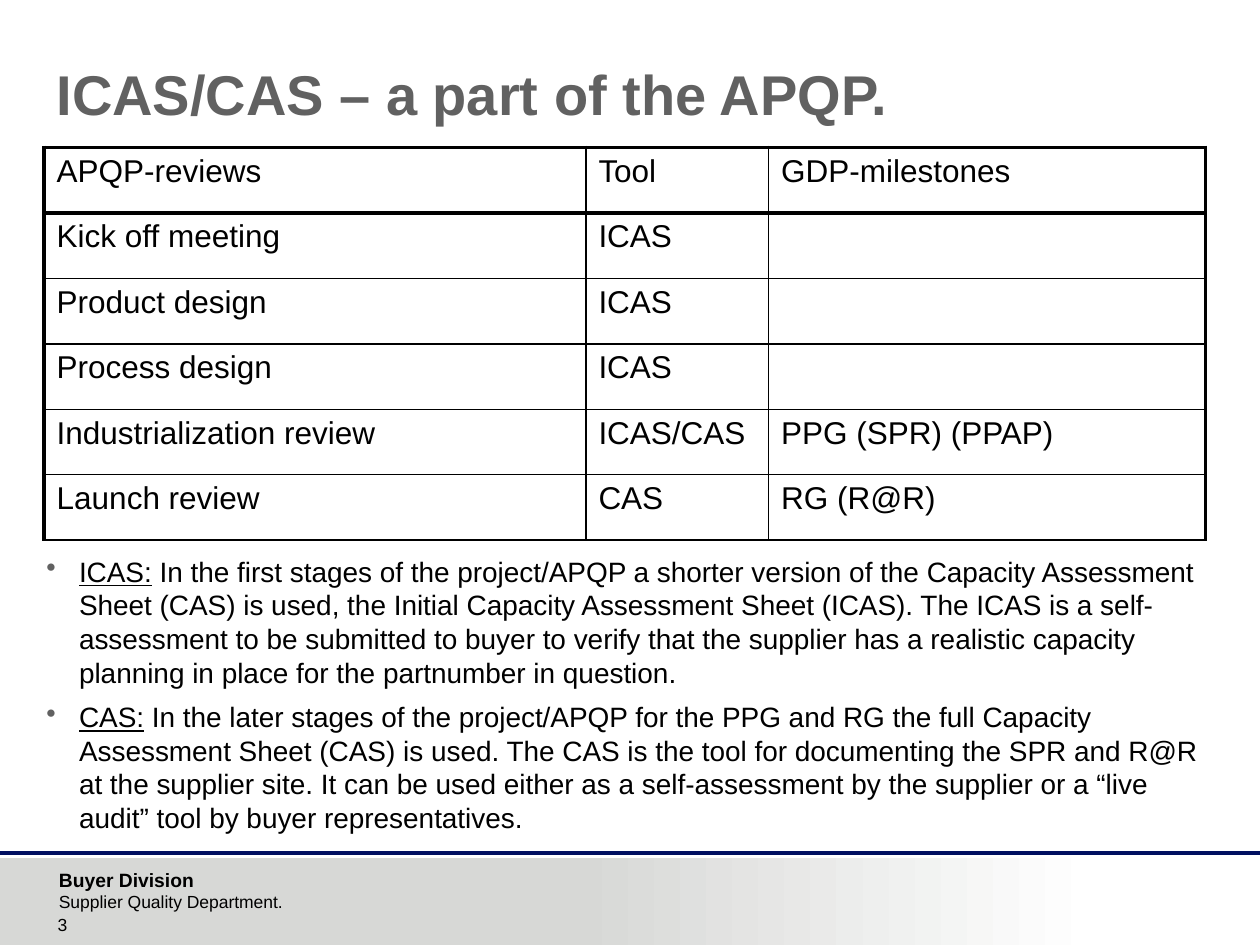
from lxml import etree
from pptx import Presentation
from pptx.dml.color import RGBColor
from pptx.enum.shapes import MSO_CONNECTOR as Connector, MSO_SHAPE as Shape
from pptx.enum.text import MSO_ANCHOR as Anchor
from pptx.oxml.ns import qn
from pptx.util import Pt

BLACK = RGBColor(0x00, 0x00, 0x00)
WHITE = RGBColor(0xFF, 0xFF, 0xFF)
GREY = RGBColor(0x61, 0x61, 0x61)
FOOTER_GREY = RGBColor(0xD7, 0xD8, 0xD6)
NAVY = RGBColor(0x00, 0x0F, 0x60)

SLIDE_WIDTH, SLIDE_HEIGHT = 720, 540
FOOTER_TOP = 490.3
THICK, THIN = 2.25, 1

REVIEWS = [
    ("APQP-reviews", "Tool", "GDP-milestones"),
    ("Kick off meeting", "ICAS", ""),
    ("Product design", "ICAS", ""),
    ("Process design", "ICAS", ""),
    ("Industrialization review", "ICAS/CAS", "PPG (SPR) (PPAP)"),
    ("Launch review", "CAS", "RG (R@R)"),
]
DEFINITIONS = [
    ("ICAS:", " In the first stages of the project/APQP a shorter version of the "
     "Capacity Assessment Sheet (CAS) is used, the Initial Capacity Assessment "
     "Sheet (ICAS). The ICAS is a self-assessment to be submitted to buyer to "
     "verify that the supplier has a realistic capacity planning in place for "
     "the partnumber in question."),
    ("CAS:", " In the later stages of the project/APQP for the PPG and RG the full "
     "Capacity Assessment Sheet (CAS) is used. The CAS is the tool for "
     "documenting the SPR and R@R at the supplier site. It can be used either "
     "as a self-assessment by the supplier or a “live audit” tool by buyer "
     "representatives."),
]


def write(paragraph, text, size=18, color=BLACK, bold=False, underline=False,
          font="Arial"):
    run = paragraph.add_run()
    run.text = text
    run.font.name = font
    run.font.size = Pt(size)
    run.font.color.rgb = color
    run.font.bold = bold
    run.font.underline = underline


def add_bullet(paragraph, indent, color):
    properties = paragraph._p.get_or_add_pPr()
    properties.set("marL", str(Pt(indent)))
    properties.set("indent", str(-Pt(indent)))
    bullet_color = etree.SubElement(properties, qn("a:buClr"))
    etree.SubElement(bullet_color, qn("a:srgbClr"), val=str(color))
    etree.SubElement(properties, qn("a:buChar"), char="•")


def set_borders(cell, widths, color=BLACK):
    """Draw cell borders; widths are left, right, top, bottom."""
    properties = cell._tc.get_or_add_tcPr()
    for index, (side, width) in enumerate(zip("LRTB", widths)):
        line = etree.Element(qn(f"a:ln{side}"), w=str(Pt(width)))
        fill = etree.SubElement(line, qn("a:solidFill"))
        etree.SubElement(fill, qn("a:srgbClr"), val=str(color))
        properties.insert(index, line)


class SlideBuilder:
    def __init__(self, slide):
        self.slide = slide

    def rectangle(self, left, top, width, height, color, end_color=None):
        shape = self.slide.shapes.add_shape(
            Shape.RECTANGLE, Pt(left), Pt(top), Pt(width), Pt(height))
        shape.shadow.inherit = False
        shape.line.fill.background()
        if end_color is None:
            shape.fill.solid()
            shape.fill.fore_color.rgb = color
        else:
            shape.fill.gradient()
            shape.fill.gradient_angle = 0
            for stop, stop_color in zip(shape.fill.gradient_stops, (color, end_color)):
                stop.color.rgb = stop_color

    def line(self, x1, y1, x2, y2, color, width):
        connector = self.slide.shapes.add_connector(
            Connector.STRAIGHT, Pt(x1), Pt(y1), Pt(x2), Pt(y2))
        connector.line.color.rgb = color
        connector.line.width = Pt(width)
        etree.SubElement(connector._element.spPr, qn("a:effectLst"))

    def text_box(self, left, top, width, height, wrap=True, anchor=Anchor.TOP):
        box = self.slide.shapes.add_textbox(Pt(left), Pt(top), Pt(width), Pt(height))
        frame = box.text_frame
        frame.word_wrap = wrap
        frame.vertical_anchor = anchor
        return frame

    def table(self, left, top, column_widths, row_height, rows):
        table = self.slide.shapes.add_table(
            len(rows), len(column_widths), Pt(left), Pt(top),
            Pt(sum(column_widths)), Pt(row_height * len(rows))).table
        table.first_row = table.horz_banding = False
        for column, width in zip(table.columns, column_widths):
            column.width = Pt(width)
        last_column = len(column_widths) - 1
        for i, texts in enumerate(rows):
            table.rows[i].height = Pt(row_height)
            for j, text in enumerate(texts):
                cell = table.cell(i, j)
                cell.fill.background()
                set_borders(cell, (THICK if j == 0 else THIN,
                                   THICK if j == last_column else THIN,
                                   THICK if i <= 1 else THIN,
                                   THICK if i == 0 else THIN))
                if text:
                    write(cell.text_frame.paragraphs[0], text)


def main():
    presentation = Presentation()
    presentation.slide_width = Pt(SLIDE_WIDTH)
    presentation.slide_height = Pt(SLIDE_HEIGHT)
    builder = SlideBuilder(presentation.slides.add_slide(presentation.slide_layouts[6]))

    # Footer band
    footer_height = SLIDE_HEIGHT - FOOTER_TOP
    builder.rectangle(329, FOOTER_TOP, 298, footer_height, FOOTER_GREY, WHITE)
    builder.rectangle(0, FOOTER_TOP, 334, footer_height, FOOTER_GREY)
    builder.line(0, 487.4, SLIDE_WIDTH, 487.4, NAVY, 2)

    # Footer text and slide number
    department = builder.text_box(26.6, 492.5, 163.4, 16.6, wrap=False)
    write(department.paragraphs[0], "Buyer Division", size=11, bold=True)
    write(department.add_paragraph(), "Supplier Quality Department.", size=10)
    number = builder.text_box(25.9, 521.3, 31, 16.6, anchor=Anchor.BOTTOM)
    write(number.paragraphs[0], "3", size=10)

    # Title
    title = builder.text_box(25.2, 34.6, 661, 90).paragraphs[0]
    title.line_spacing = 0.9
    write(title, "ICAS/CAS – a part of the APQP.", size=32, color=GREY, bold=True)

    # Review table
    builder.table(25.2, 84.2, (309.6, 104.4, 249.8), 37.44, REVIEWS)

    # Definitions
    frame = builder.text_box(19.4, 313.2, 676.8, 152.6)
    for index, (term, meaning) in enumerate(DEFINITIONS):
        paragraph = frame.add_paragraph() if index else frame.paragraphs[0]
        add_bullet(paragraph, 18.7, GREY)
        if index:
            paragraph.space_before = Pt(6.4)
        write(paragraph, term, size=16, underline=True)
        write(paragraph, meaning, size=16)

    presentation.save("out.pptx")


if __name__ == "__main__":
    main()
